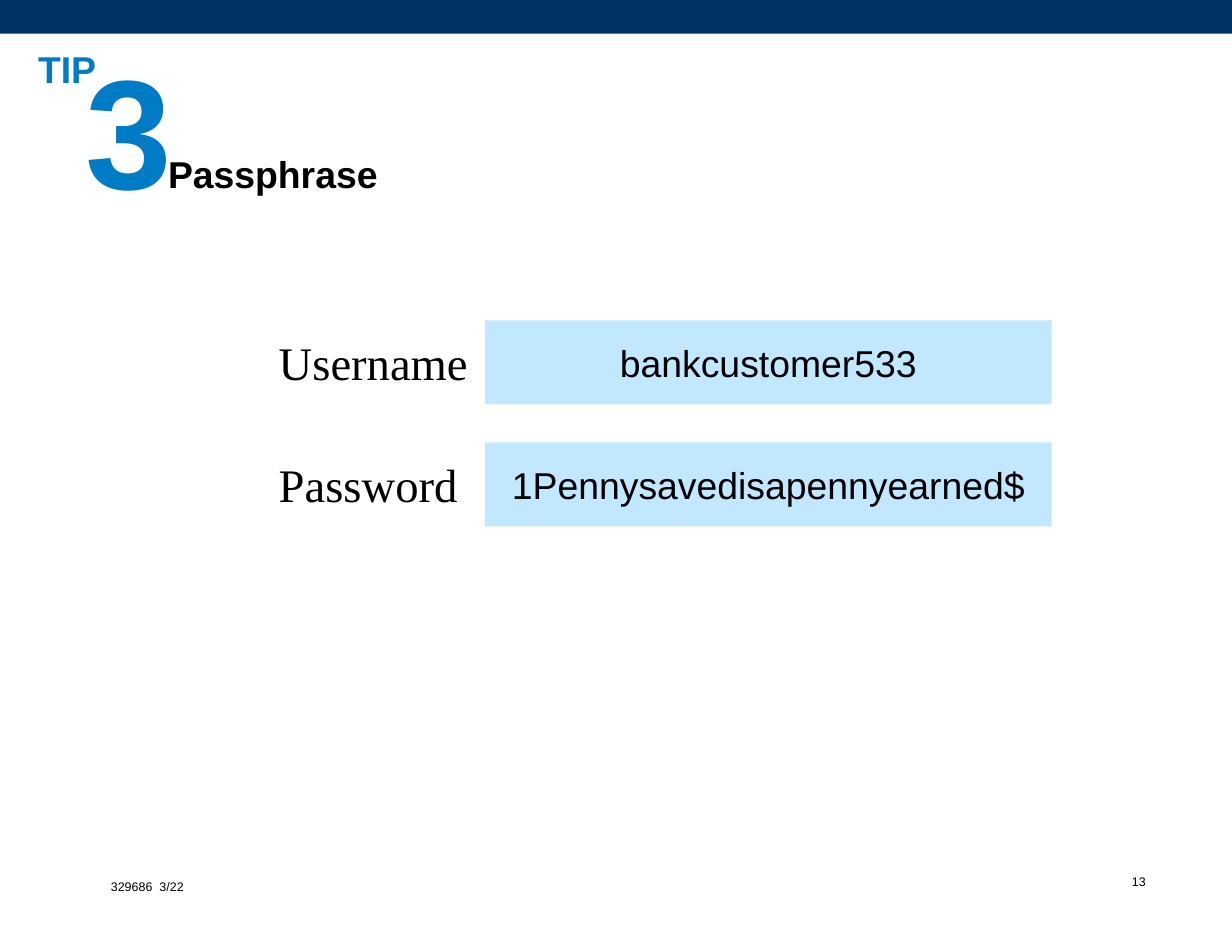
"""Build the passphrase tip slide."""
from pptx import Presentation
from pptx.dml.color import RGBColor
from pptx.enum.shapes import MSO_SHAPE as Shape
from pptx.enum.text import MSO_ANCHOR as Anchor, PP_ALIGN as Align
from pptx.util import Inches, Pt


def paint(fmt, hue):
    fmt.solid()
    fmt.fore_color.rgb = RGBColor.from_string(hue)


def write(shape, text, size, hue="000000", font="Arial", bold=False,
          align=Align.LEFT, space=1.0, pads=(0.1, 0.05, 0.1, 0.05),
          anchor=Anchor.TOP, wrap=True):
    frame = shape.text_frame
    frame.text = text
    sides = ("left", "top", "right", "bottom")
    form = {f"margin_{side}": Inches(pad) for side, pad in zip(sides, pads)}
    form.update(word_wrap=wrap, vertical_anchor=anchor)
    for key, val in form.items():
        setattr(frame, key, val)
    para = frame.paragraphs[0]
    para.alignment, para.line_spacing = align, space
    run = para.runs[0].font
    for key, val in {"name": font, "size": Pt(size), "bold": bold}.items():
        setattr(run, key, val)
    paint(run.fill, hue)


deck = Presentation()
deck.slide_width, deck.slide_height = Inches(11), Inches(8.5)
slide = deck.slides.add_slide(deck.slide_layouts[6])
shapes = slide.shapes

rows = [("Username", "bankcustomer533", 2.86),
        ("Password", "1Pennysavedisapennyearned$", 3.95)]
bars = [((0, 0, 11, 0.3), "003365", None)]
bars += [((4.33, top, 5.06, 0.75), "C1E8FF", text) for _, text, top in rows]
for area, hue, text in bars:
    bar = shapes.add_shape(Shape.RECTANGLE, *map(Inches, area))
    bar.shadow.inherit = False
    paint(bar.fill, hue)
    bar.line.fill.background()
    if text:
        write(bar, text, 24, align=Align.CENTER, anchor=Anchor.MIDDLE)

blue = "007CC6"
wide = (0.11, 0.06, 0.11, 0.06)
slim = (0, 0.06, 0, 0.06)
texts = [
    ((10.05, 7.76, 0.23, 0.23), "13", 8,
     {"align": Align.RIGHT, "space": 0.9, "pads": (0, 0.06, 0.05, 0.06)}),
    ((0.88, 7.79, 0.89, 0.25), "329686  3/22", 8,
     {"pads": wide, "wrap": False}),
    ((0.23, 0.4, 0.87, 0.35), "TIP", 24,
     {"hue": blue, "bold": True, "space": 0.9, "pads": wide}),
    ((0.76, 0.43, 0.48, 0.59), "3", 100,
     {"hue": blue, "bold": True, "align": Align.CENTER, "space": 0.9,
      "pads": slim}),
    ((1.5, 1.25, 8.52, 0.49), "Passphrase", 24,
     {"bold": True, "space": 1.1, "pads": slim}),
]
texts += [((2.39, top + 0.07, 1.9, 0.6), label, 30,
           {"font": "Times New Roman"}) for label, _, top in rows]
for area, text, size, form in texts:
    write(shapes.add_textbox(*map(Inches, area)), text, size, **form)

deck.save("out.pptx")
